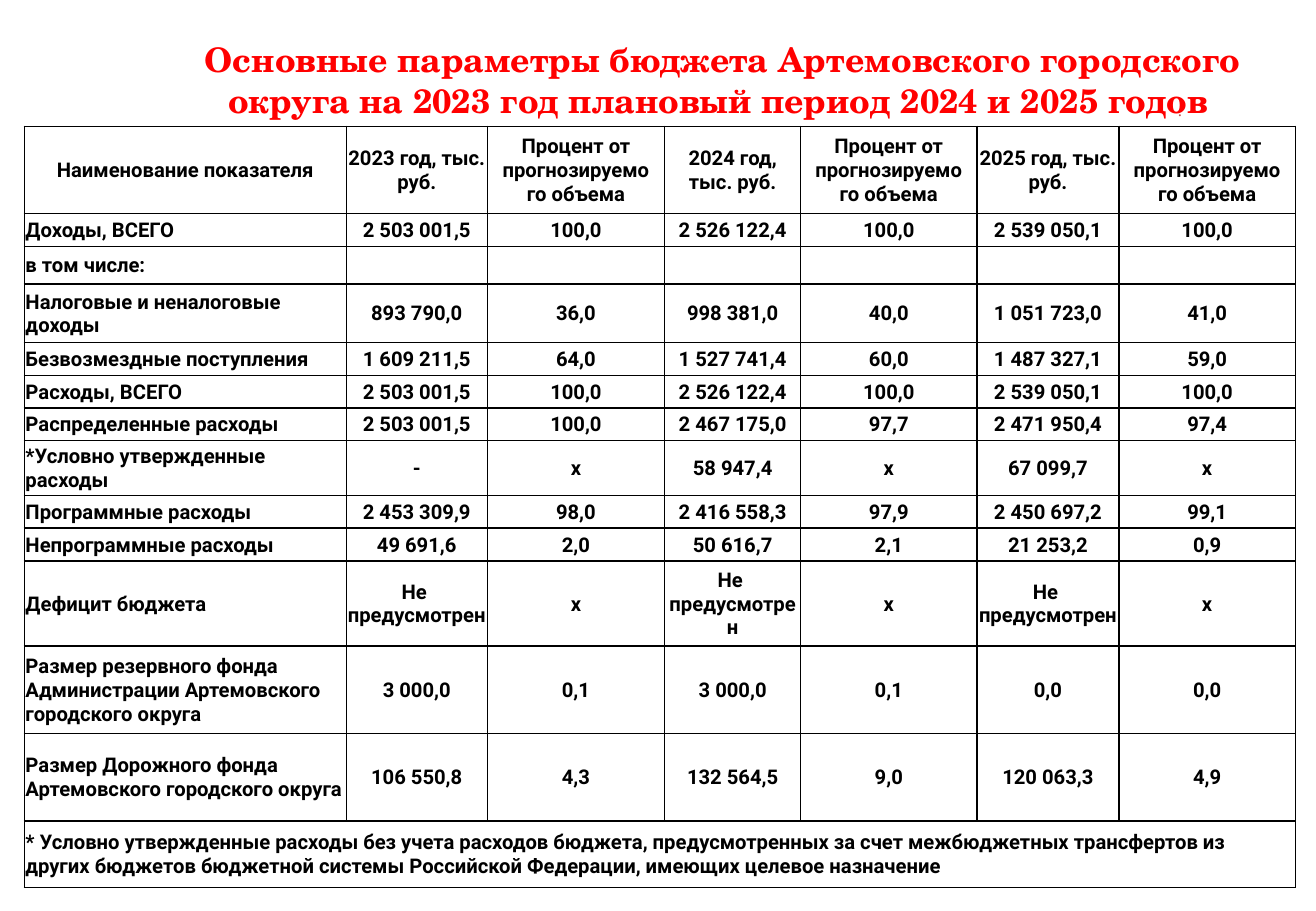
import pptx
import pptx.util
import pptx.dml.color
import pptx.enum.text
import pptx.oxml
import pptx.oxml.ns
from pptx.util import Inches

COLORS = {"title": "FF0000", "text": "000000", "border": "000000", "dot": "C0504D"}
ALIGN = pptx.enum.text.PP_ALIGN
ANCHOR = pptx.enum.text.MSO_ANCHOR


def write(tf, text, size=12, font="Roboto", color="text", bold=True, align=ALIGN.CENTER):
    for i, line in enumerate(text.split("\n")):
        p = tf.paragraphs[0] if i == 0 else tf.add_paragraph()
        p.alignment = align
        r = p.add_run()
        r.text = line
        r.font.size = pptx.util.Pt(size)
        r.font.name = font
        r.font.bold = bold
        r.font.color.rgb = pptx.dml.color.RGBColor.from_string(COLORS[color])


def add_borders(cell):
    tc_pr = cell._tc.get_or_add_tcPr()
    for i, side in enumerate(("lnL", "lnR", "lnT", "lnB")):
        ln = pptx.oxml.parse_xml(
            f'<a:{side} {pptx.oxml.ns.nsdecls("a")} w="12700"><a:solidFill>'
            f'<a:srgbClr val="{COLORS["border"]}"/></a:solidFill></a:{side}>')
        tc_pr.insert(i, ln)


prs = pptx.Presentation()
prs.slide_width = Inches(10.83)
prs.slide_height = Inches(7.5)
s = prs.slides.add_slide(prs.slide_layouts[5])

title = s.shapes.title
title.left, title.top, title.width, title.height = map(Inches, (1.31, 0.27, 9.28, 0.77))
tf = title.text_frame
tf.word_wrap = True
tf.auto_size = pptx.enum.text.MSO_AUTO_SIZE.NONE
tf.vertical_anchor = ANCHOR.TOP
write(tf, "Основные параметры бюджета Артемовского городского округа "
      "на 2023 год плановый период 2024 и 2025 годов ",
      size=20, font="TeX Gyre Schola", color="title")

dot = s.shapes.add_textbox(Inches(9.34), Inches(0.76), Inches(0.74), Inches(0.24))
tf = dot.text_frame
tf.word_wrap = False
tf.vertical_anchor = ANCHOR.MIDDLE
tf.margin_bottom = 0
write(tf, ".", size=10, font="Times New Roman", color="dot", bold=False)

percent = "Процент от прогнозируемо\nго объема"
no_deficit = "Не \nпредусмотрен"
rows = [
    (0.72, "Наименование показателя", "2023 год, тыс. руб.", percent,
     "2024 год, тыс. руб.", percent, "2025 год, тыс. руб.", percent),
    (0.27, "Доходы, ВСЕГО", "2 503 001,5", "100,0", "2 526 122,4", "100,0", "2 539 050,1", "100,0"),
    (0.28, "в том числе:", "", "", "", "", "", ""),
    (0.48, "Налоговые и неналоговые доходы", "893 790,0", "36,0", "998 381,0", "40,0",
     "1 051 723,0", "41,0"),
    (0.27, "Безвозмездные поступления", "1 609 211,5", "64,0", "1 527 741,4", "60,0",
     "1 487 327,1", "59,0"),
    (0.27, "Расходы, ВСЕГО", "2 503 001,5", "100,0", "2 526 122,4", "100,0", "2 539 050,1", "100,0"),
    (0.27, "Распределенные расходы", "2 503 001,5", "100,0", "2 467 175,0", "97,7",
     "2 471 950,4", "97,4"),
    (0.45, "*Условно утвержденные расходы", "-", "х", "58 947,4", "х", "67 099,7", "х"),
    (0.27, "Программные расходы", "2 453 309,9", "98,0", "2 416 558,3", "97,9",
     "2 450 697,2", "99,1"),
    (0.27, "Непрограммные расходы", "49 691,6", "2,0", "50 616,7", "2,1", "21 253,2", "0,9"),
    (0.7, "Дефицит бюджета", no_deficit, "х", no_deficit, "х", no_deficit, "х"),
    (0.72, "Размер резервного фонда Администрации Артемовского городского округа",
     "3 000,0", "0,1", "3 000,0", "0,1", "0,0", "0,0"),
    (0.72, "Размер Дорожного фонда Артемовского городского округа",
     "106 550,8", "4,3", "132 564,5", "9,0", "120 063,3", "4,9"),
    (0.55, "* Условно утвержденные расходы без учета расходов бюджета, предусмотренных за счет "
     "межбюджетных трансфертов из других бюджетов бюджетной системы Российской Федерации, "
     "имеющих целевое назначение", "", "", "", "", "", ""),
]
widths = [2.65, 1.16, 1.46, 1.12, 1.45, 1.17, 1.45]

table = s.shapes.add_table(len(rows), len(widths), Inches(0.2), Inches(1.04),
                           Inches(10.46), Inches(6.24)).table
table.first_row = False
table.horz_banding = False
for column, width in zip(table.columns, widths):
    column.width = Inches(width)

last = len(rows) - 1
table.cell(last, 0).merge(table.cell(last, len(widths) - 1))
for i, (height, *texts) in enumerate(rows):
    table.rows[i].height = Inches(height)
    for j, text in enumerate(texts):
        cell = table.cell(i, j)
        cell.fill.background()
        add_borders(cell)
        cell.margin_left = cell.margin_right = cell.margin_top = Inches(0.01)
        cell.margin_bottom = 0
        cell.vertical_anchor = ANCHOR.MIDDLE
        if not cell.is_spanned:
            write(cell.text_frame, text, align=ALIGN.LEFT if i and j == 0 else ALIGN.CENTER)

prs.save("out.pptx")
